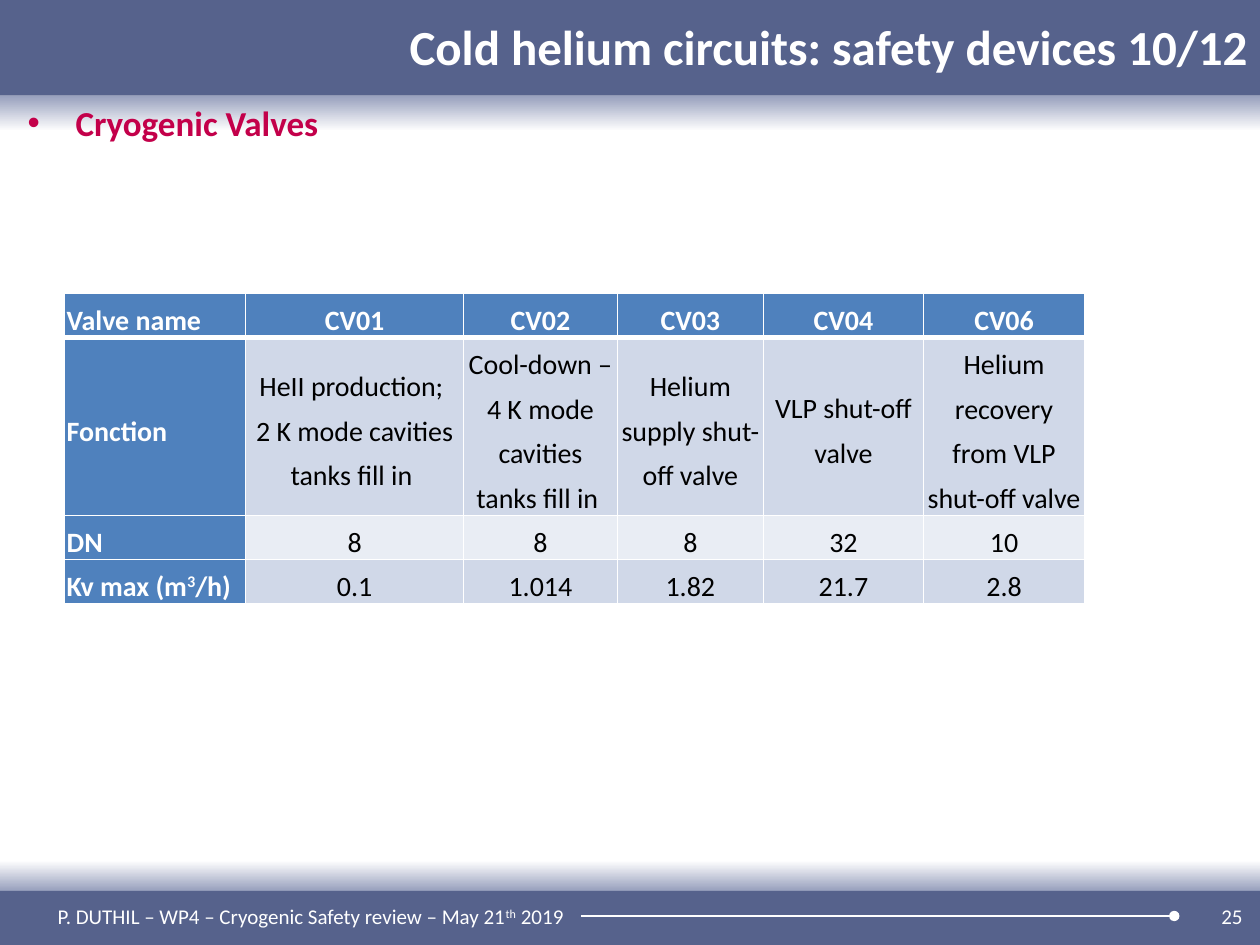
"""Build the cryogenic valves slide with its header, footer and valve table."""
import pptx
import pptx.dml.color
import pptx.enum.shapes
import pptx.enum.text
import pptx.oxml
import pptx.oxml.ns
import pptx.util

Inches = pptx.util.Inches
Pt = pptx.util.Pt
ALIGN = pptx.enum.text.PP_ALIGN
MIDDLE = pptx.enum.text.MSO_ANCHOR.MIDDLE
SHAPE = pptx.enum.shapes.MSO_SHAPE
NS = pptx.oxml.ns.nsdecls("a")
COLORS = {
    "band": "56628C", "fade": "98A0BD", "white": "FFFFFF", "topic": "C3004A",
    "header": "4F81BD", "odd": "D0D8E8", "even": "E9EDF4", "black": "000000",
}


def rgb(name):
    return pptx.dml.color.RGBColor.from_string(COLORS[name])


def write(paragraph, text, size, color, bold=False, align=ALIGN.LEFT):
    paragraph.alignment = align
    for index, part in enumerate(text.split("^")):
        run = paragraph.add_run()
        run.text = part
        run.font.name = "Calibri"
        run.font.size = Pt(size)
        run.font.bold = bold
        run.font.color.rgb = rgb(color)
        if index % 2:
            run.font._element.set("baseline", "30000")


deck = pptx.Presentation()
deck.slide_width, deck.slide_height = Inches(10), Inches(7.5)
slide = deck.slides.add_slide(deck.slide_layouts[5])
shapes = slide.shapes

for top, height, stops in [
    (0, 0.76, ["band"]),
    (0.76, 0.28, ["fade", "white"]),
    (6.83, 0.24, ["white", "fade"]),
    (7.07, 0.43, ["band"]),
]:
    band = shapes.add_shape(SHAPE.RECTANGLE, 0, Inches(top), Inches(10), Inches(height))
    band.shadow.inherit = False
    band.line.fill.background()
    if len(stops) == 1:
        band.fill.solid()
        band.fill.fore_color.rgb = rgb(stops[0])
    else:
        band.fill.gradient()
        band.fill.gradient_angle = 270
        for stop, color in zip(band.fill.gradient_stops, stops):
            stop.color.rgb = rgb(color)

rule = shapes.add_connector(
    pptx.enum.shapes.MSO_CONNECTOR.STRAIGHT,
    Inches(4.61), Inches(7.27), Inches(9.32), Inches(7.27))
rule.line.color.rgb = rgb("white")
rule.line.width = Pt(1.5)
rule.line._get_or_add_ln().append(pptx.oxml.parse_xml(f'<a:tailEnd {NS} type="oval"/>'))
rule._element.spPr.append(pptx.oxml.parse_xml(f"<a:effectLst {NS}/>"))

for left, width, text, align in [
    (7.63, 2.33, "25", ALIGN.RIGHT),
    (0.36, 4.24, "P. DUTHIL – WP4 – Cryogenic Safety review – May 21^th^ 2019", ALIGN.LEFT),
]:
    footer = shapes.add_textbox(Inches(left), Inches(7.07), Inches(width), Inches(0.4)).text_frame
    footer.word_wrap = True
    footer.vertical_anchor = MIDDLE
    write(footer.paragraphs[0], text, 12, "white", align=align)

title = shapes.title
title.left, title.top = Inches(1.06), Inches(-0.03)
title.width, title.height = Inches(8.94), Inches(0.79)
title.text_frame.vertical_anchor = MIDDLE
write(title.text_frame.paragraphs[0], "Cold helium circuits: safety devices 10/12",
      28, "white", True, ALIGN.RIGHT)
title._element.getparent().append(title._element)

topic = shapes.add_textbox(Inches(0.2), Inches(0.76), Inches(9.8), Inches(6.32)).text_frame
topic.word_wrap = True
topic.margin_left = topic.margin_right = topic.margin_bottom = Inches(0.02)
topic.margin_top = Inches(0.05)
topic_format = topic.paragraphs[0]._p.get_or_add_pPr()
topic_format.set("marL", str(Inches(0.38)))
topic_format.set("indent", str(Inches(-0.38)))
topic_format.append(pptx.oxml.parse_xml(f'<a:buFont {NS} typeface="Arial"/>'))
topic_format.append(pptx.oxml.parse_xml(f'<a:buChar {NS} char="•"/>'))
write(topic.paragraphs[0], "Cryogenic Valves", 20, "topic", True)

valve_rows = [
    ["Valve name", "CV01", "CV02", "CV03", "CV04", "CV06"],
    ["Fonction", "HeII\u00a0production; \n2 K mode cavities tanks fill in ".replace("\u00a0", " "),
     "Cool-down – 4 K mode cavities tanks fill in ", "Helium supply shut-off valve",
     "VLP shut-off valve", "Helium recovery from VLP shut-off valve"],
    ["DN", "8", "8", "8", "32", "10"],
    ["Kv max (m^3^/h)", "0.1", "1.014", "1.82", "21.7", "2.8"],
]
column_widths = [1.44, 1.73, 1.22, 1.16, 1.27, 1.28]
row_heights = [0.35, 1.41, 0.35, 0.35]
valves = shapes.add_table(len(valve_rows), len(column_widths), Inches(0.51), Inches(2.33),
                          Inches(sum(column_widths)), Inches(sum(row_heights))).table
for column, width in zip(valves.columns, column_widths):
    column.width = Inches(width)

for r, (texts, height) in enumerate(zip(valve_rows, row_heights)):
    valves.rows[r].height = Inches(height)
    for c, text in enumerate(texts):
        cell = valves.cell(r, c)
        heading = r == 0 or c == 0
        cell.vertical_anchor = MIDDLE
        cell.margin_left = cell.margin_right = Inches(0.02)
        cell.margin_top = cell.margin_bottom = 0
        cell.fill.solid()
        cell.fill.fore_color.rgb = rgb("header" if heading else "odd" if r % 2 else "even")
        for line, content in enumerate(text.split("\n")):
            paragraph = cell.text_frame.add_paragraph() if line else cell.text_frame.paragraphs[0]
            paragraph.line_spacing = 1.3
            align = ALIGN.CENTER if c else ALIGN.JUSTIFY if r else ALIGN.LEFT
            write(paragraph, content, 16, "white" if heading else "black", heading, align)
        for position, side in enumerate(["lnL", "lnR", "lnT", "lnB"]):
            thick = (r, side) in [(0, "lnB"), (1, "lnT")]
            cell._tc.get_or_add_tcPr().insert(position, pptx.oxml.parse_xml(
                f'<a:{side} {NS} w="{Pt(3 if thick else 1)}"><a:solidFill>'
                f'<a:srgbClr val="{COLORS["white"]}"/></a:solidFill></a:{side}>'))

deck.save("out.pptx")
